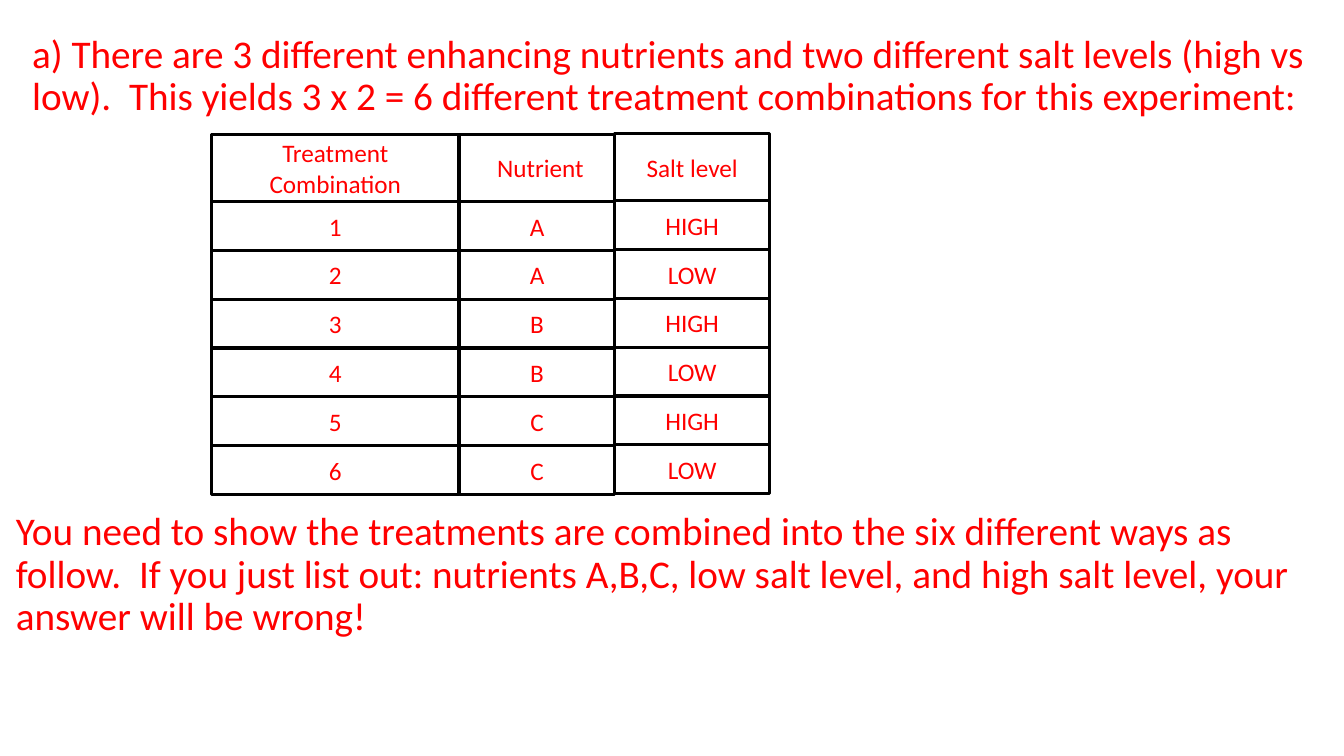
from dataclasses import dataclass

import pptx
import pptx.dml.color
import pptx.enum.shapes
import pptx.enum.text
import pptx.slide
import pptx.text.text
import pptx.util

Cm = pptx.util.Cm
Pt = pptx.util.Pt
RED = pptx.dml.color.RGBColor(0xFF, 0x00, 0x00)
BLACK = pptx.dml.color.RGBColor(0x00, 0x00, 0x00)
FONT = "Calibri"

HEADER_HEIGHT = 1.7
ROW_HEIGHT = 1.23


@dataclass
class Note:
    left: float
    top: float
    width: float
    height: float
    text: str


@dataclass
class Column:
    left: float
    top: float
    width: float
    header: str
    values: list[str]
    header_inset: float = 0.25


NOTES = [
    Note(0.56, 0.74, 32.79, 2.41,
         "a) There are 3 different enhancing nutrients and two different salt levels "
         "(high vs low).  This yields 3 x 2 = 6 different treatment combinations "
         "for this experiment:"),
    Note(0.15, 12.78, 32.79, 4.27,
         "You need to show the treatments are combined into the six different ways as "
         "follow.  If you just list out: nutrients A,B,C, low salt level, and high "
         "salt level, your answer will be wrong!"),
]

COLUMNS = [
    Column(5.33, 3.38, 6.24, "Treatment Combination", [str(n) for n in range(1, 7)]),
    Column(11.58, 3.38, 3.91, "Nutrient", list("AABBCC"), header_inset=0.42),
    Column(15.49, 3.36, 3.91, "Salt level", ["HIGH", "LOW"] * 3),
]


def write(tf: pptx.text.text.TextFrame, text: str, size: int) -> None:
    tf.word_wrap = True
    p = tf.paragraphs[0]
    p.text = text
    p.font.name = FONT
    p.font.size = Pt(size)
    p.font.color.rgb = RED


def draw_note(s: pptx.slide.Slide, note: Note) -> None:
    sp = s.shapes.add_textbox(Cm(note.left), Cm(note.top), Cm(note.width), Cm(note.height))
    write(sp.text_frame, note.text, 28)
    p = sp.text_frame.paragraphs[0]
    p.line_spacing = 0.9
    p.space_before = Pt(10)


def draw_cell(s: pptx.slide.Slide, column: Column, top: float, height: float,
              text: str, inset: float = 0.25) -> None:
    sp = s.shapes.add_shape(pptx.enum.shapes.MSO_SHAPE.RECTANGLE,
                            Cm(column.left), Cm(top), Cm(column.width), Cm(height))
    sp.shadow.inherit = False
    sp.fill.background()
    sp.line.color.rgb = BLACK
    sp.line.width = Pt(2.25)
    tf = sp.text_frame
    tf.margin_left = Cm(inset)
    tf.vertical_anchor = pptx.enum.text.MSO_ANCHOR.MIDDLE
    write(tf, text, 18)
    tf.paragraphs[0].alignment = pptx.enum.text.PP_ALIGN.CENTER


def draw_column(s: pptx.slide.Slide, column: Column) -> None:
    draw_cell(s, column, column.top, HEADER_HEIGHT, column.header, column.header_inset)
    for i, value in enumerate(column.values):
        top = column.top + HEADER_HEIGHT + i * ROW_HEIGHT
        draw_cell(s, column, top, ROW_HEIGHT, value)


def main() -> None:
    prs = pptx.Presentation()
    prs.slide_width, prs.slide_height = Cm(33.87), Cm(19.05)
    s = prs.slides.add_slide(prs.slide_layouts[6])

    # Introduction, treatment grid, closing advice
    introduction, advice = NOTES
    draw_note(s, introduction)
    for column in COLUMNS:
        draw_column(s, column)
    draw_note(s, advice)

    prs.save("out.pptx")


if __name__ == "__main__":
    main()
